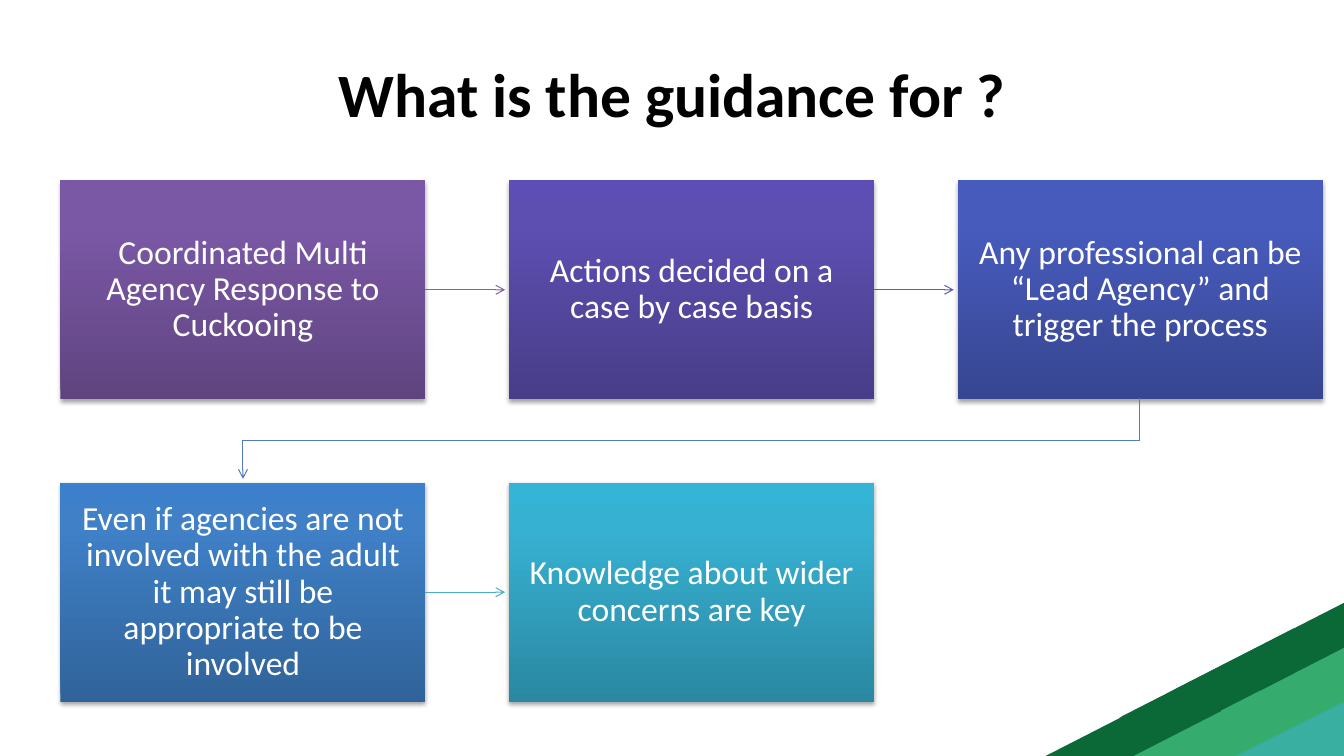
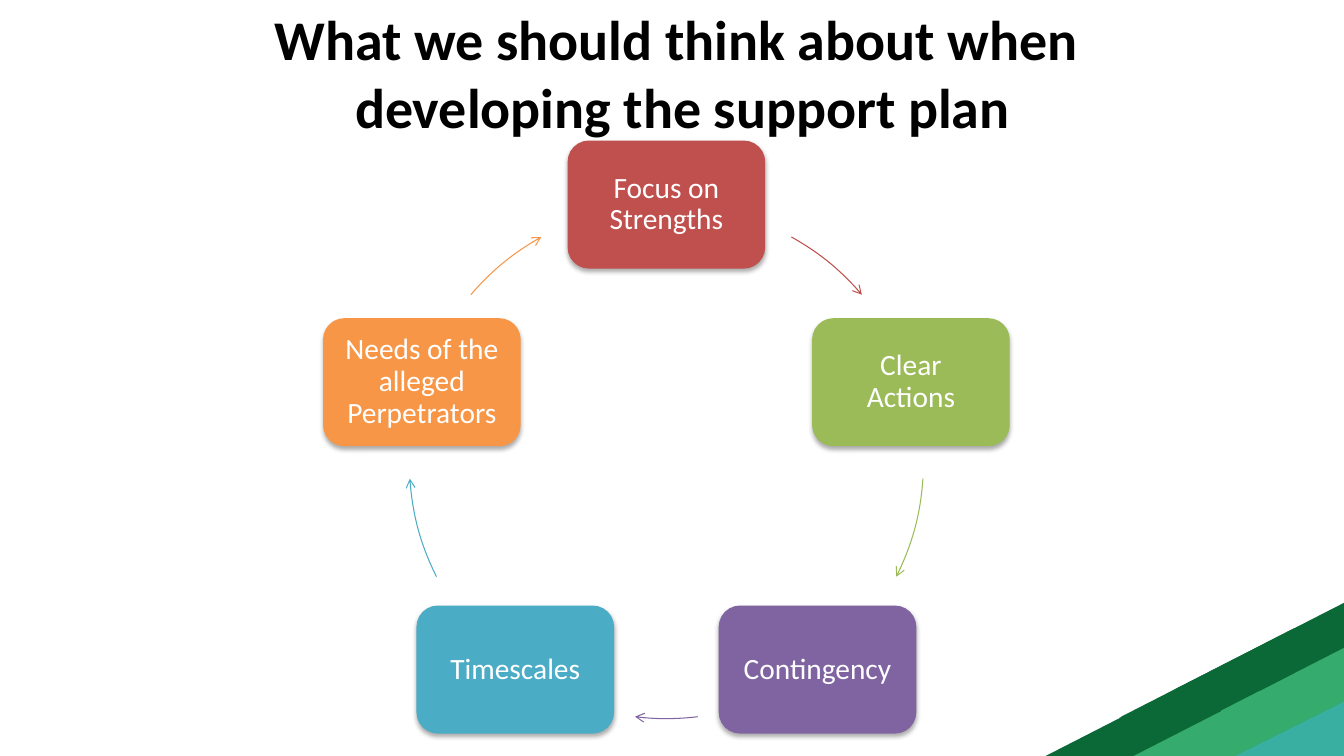
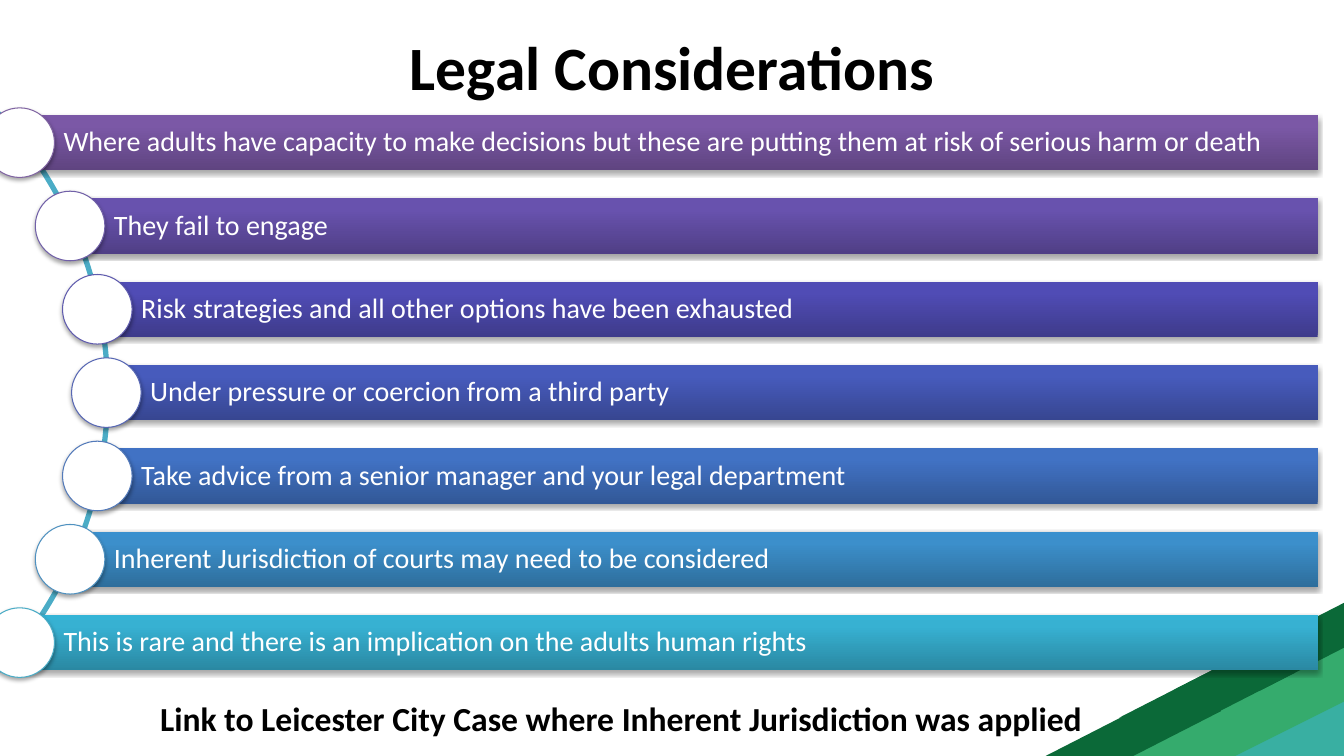
"""Build three slides on guidance, support plans and legal considerations."""
import copy
import math
from pptx import Presentation
from pptx.dml.color import RGBColor
from pptx.enum import shapes, text
from pptx.oxml import parse_xml
from pptx.oxml.ns import nsdecls, qn
from pptx.util import Inches, Pt

KIND = shapes.MSO_SHAPE
SOFT = (35, 40000, 23000)
DEEP = (32, 45000, 28000)
PURPLE = "5F4480 7B58A6 7C57A8"
BLUE = "374691 475BBC 455ABF"
TEAL = "2A88A2 37B1D2 34B4D6"


def paint(shape, fill=None, line=None, width=0.75, shade=None, head=False):
    """Set fill (one colour or three gradient stops), line, shadow and arrowhead."""
    props = shape.element.spPr
    if fill and " " in fill:
        shape.fill.gradient()
        shape.fill.gradient_angle = 90
        group = props.find(".//" + qn("a:gsLst"))
        group.append(copy.deepcopy(group[0]))
        for stop, spot, tone in zip(shape.fill.gradient_stops, (0, 0.8, 1), fill.split()):
            stop.position = spot
            stop.color.rgb = RGBColor.from_string(tone)
    elif fill:
        shape.fill.solid()
        shape.fill.fore_color.rgb = RGBColor.from_string(fill)
    elif hasattr(shape, "fill"):
        shape.fill.background()
    if line:
        shape.line.color.rgb = RGBColor.from_string(line)
        shape.line.width = Pt(width)
    else:
        shape.line.fill.background()
    if head:
        props.find(qn("a:ln")).append(parse_xml(f'<a:tailEnd {nsdecls("a")} type="arrow"/>'))
    inner = ""
    if shade:
        alpha, blur, dist = shade
        inner = (f'<a:outerShdw blurRad="{blur}" dist="{dist}" dir="5400000" rotWithShape="0">'
                 f'<a:srgbClr val="000000"><a:alpha val="{alpha}000"/></a:srgbClr></a:outerShdw>')
    props.append(parse_xml(f'<a:effectLst {nsdecls("a")}>{inner}</a:effectLst>'))


def write(shape, words, size, tone="FFFFFF", bold=False, side="CENTER", space=0.9,
          pads=(0.1, 0.05, 0.1, 0.05)):
    """Fill a shape with one formatted paragraph."""
    frame = shape.text_frame
    frame.text = words
    frame.word_wrap = True
    frame.vertical_anchor = text.MSO_ANCHOR.MIDDLE
    frame.margin_left, frame.margin_top, frame.margin_right, frame.margin_bottom = map(Inches, pads)
    para = frame.paragraphs[0]
    para.alignment = text.PP_ALIGN[side]
    para.line_spacing = space
    for run in para.runs:
        run.font.name = "Calibri"
        run.font.size = Pt(size)
        run.font.bold = bold
        run.font.color.rgb = RGBColor.from_string(tone)


deck = Presentation()
deck.slide_width, deck.slide_height = Inches(13.33), Inches(7.5)
blank = deck.slide_layouts[6]

slides = []
for title, left, top, size in [
    ("What is the guidance for ?", 0.67, 0.3, 44),
    ("What we should think about when \vdeveloping the support plan", 0.77, 0.09, 40),
    ("Legal Considerations", 0.67, 0.03, 44),
]:
    slide = deck.slides.add_slide(blank)
    box = slide.shapes.add_textbox(Inches(left), Inches(top), Inches(12), Inches(1.25))
    write(box, title, size, "000000", True, space=1.0)
    slides.append(slide)
guide, plan, legal = slides

for kind, left, top, wide, high, tone in [
    (KIND.RIGHT_TRIANGLE, 12.21, 6.93, 1.16, 0.57, "39AFA2"),
    (KIND.DIAGONAL_STRIPE, 11.13, 6.38, 2.24, 1.12, "35AB6D"),
    (KIND.DIAGONAL_STRIPE, 10.37, 6.61, 1.74, 0.89, "0B6938"),
    (KIND.DIAGONAL_STRIPE, 11.1, 6.23, 1.74, 0.89, "0B6938"),
    (KIND.DIAGONAL_STRIPE, 11.63, 5.96, 1.74, 0.89, "0B6938"),
]:
    band = guide.shapes.add_shape(kind, Inches(left), Inches(top), Inches(wide), Inches(high))
    paint(band, tone)
    if kind == KIND.RIGHT_TRIANGLE:
        band.element.spPr.xfrm.set("flipH", "1")
    else:
        band.rotation = 180
    blank.shapes.element.append(band.element)

steps = [
    ("Coordinated Multi Agency Response to Cuckooing", PURPLE, "8064A2"),
    ("Actions decided on a case by case basis", "483D89 5D4FB1 5C4EB4", "5F5BAE"),
    ("Any professional can be “Lead Agency” and trigger the process", BLUE, None),
    ("Even if agencies are not involved with the adult it may still be appropriate to be involved",
     "306399 3F80C7 3C80CB", "4BACC6"),
    ("Knowledge about wider concerns are key", TEAL, None),
]
for i, (words, fill, tone) in enumerate(steps):
    row, col = divmod(i, 3)
    left, top = 0.6 + 4.45 * col, 1.79 + 3 * row
    box = guide.shapes.add_shape(KIND.RECTANGLE, Inches(left), Inches(top), Inches(3.62), Inches(2.17))
    paint(box, fill, shade=SOFT)
    write(box, words, 24, pads=[0.19] * 4)
    if tone:
        mid = Inches(top + 1.085)
        arrow = guide.shapes.add_connector(
            shapes.MSO_CONNECTOR.STRAIGHT, Inches(left + 3.62), mid, Inches(left + 4.41), mid)
        arrow.begin_connect(box, 3)
        paint(arrow, line=tone, head=True)

path = guide.shapes.build_freeform(Inches(11.3), Inches(3.95))
path.add_line_segments([(Inches(x), Inches(y)) for x, y in [(11.3, 4.37), (2.41, 4.37), (2.41, 4.75)]],
                       close=False)
paint(path.convert_to_shape(), line="537ABA", head=True)

midx, midy, reach = 6.61, 4.58, 2.55
wide, high = 1.96, 1.27
topics = [
    ("Focus on Strengths", "C0504D", 299.1, 319.5),
    ("Clear Actions", "9BBB59", 3.8, 26.6),
    ("Contingency", "8064A2", 83, 97),
    ("Timescales", "4BACC6", 153.4, 176.2),
    ("Needs of the alleged Perpetrators", "F79646", 220.5, 240.9),
]
for i, (words, tone, start, stop) in enumerate(topics):
    turn = math.radians(72 * i - 90)
    left = midx + reach * math.cos(turn) - wide / 2
    top = midy + reach * math.sin(turn) - high / 2
    box = plan.shapes.add_shape(KIND.ROUNDED_RECTANGLE, Inches(left), Inches(top), Inches(wide), Inches(high))
    paint(box, tone, shade=DEEP)
    write(box, words, 21, pads=[0.15] * 4)
    arc = plan.shapes.add_shape(KIND.ARC, Inches(midx - reach), Inches(midy - reach),
                                Inches(2 * reach), Inches(2 * reach))
    arc.adjustments[0], arc.adjustments[1] = start * 0.6, stop * 0.6
    paint(arc, line=tone, head=True)

curve = legal.shapes.add_shape(KIND.BLOCK_ARC, Inches(-7.08), Inches(-0.19), Inches(8.16), Inches(8.16))
for i, value in enumerate((189, 27, 0.003)):
    curve.adjustments[i] = value
paint(curve, line="4BACC6", width=2)

points = [
    ("Where adults have capacity to make decisions but these are putting them at risk of serious harm or death",
     0.19, PURPLE, "8064A2"),
    ("They fail to engage", 0.69, "503F86 6852AE 6851B0", "7160A8"),
    ("Risk strategies and all other options have been exhausted", 0.96, "3E3B8B 504CB5 4F4BB8", "5F5BAE"),
    ("Under pressure or coercion from a third party", 1.05, BLUE, "5767B4"),
    ("Take advice from a senior manager and your legal department", 0.96, "325897 4172C4 3F72C7", "537ABA"),
    ("Inherent Jurisdiction of courts may need to be considered", 0.69, "2E6E9C 3C8FCB 3A90CE", "4F91C0"),
    ("This is rare and there is an implication on the adults human rights", 0.19, TEAL, "4BACC6"),
]
for i, (words, left, fill, tone) in enumerate(points):
    top = 1.14 + 4.96 / 6 * i
    bar = legal.shapes.add_shape(KIND.RECTANGLE, Inches(left), Inches(top), Inches(13.07 - left), Inches(0.55))
    paint(bar, fill, shade=SOFT)
    write(bar, words, 20, side="LEFT", pads=(0.44, 0.06, 0.06, 0.06))
    dot = legal.shapes.add_shape(KIND.OVAL, Inches(left - 0.34), Inches(top - 0.07), Inches(0.69), Inches(0.69))
    paint(dot, "FFFFFF", tone, shade=SOFT)

note = legal.shapes.add_textbox(Inches(1.49), Inches(6.87), Inches(9.44), Inches(0.5))
write(note, "Link to Leicester City Case where Inherent Jurisdiction was applied", 24, "000000", True, "LEFT", 1.0)
note.text_frame.word_wrap = False
note.text_frame.auto_size = text.MSO_AUTO_SIZE.SHAPE_TO_FIT_TEXT

deck.save("out.pptx")
